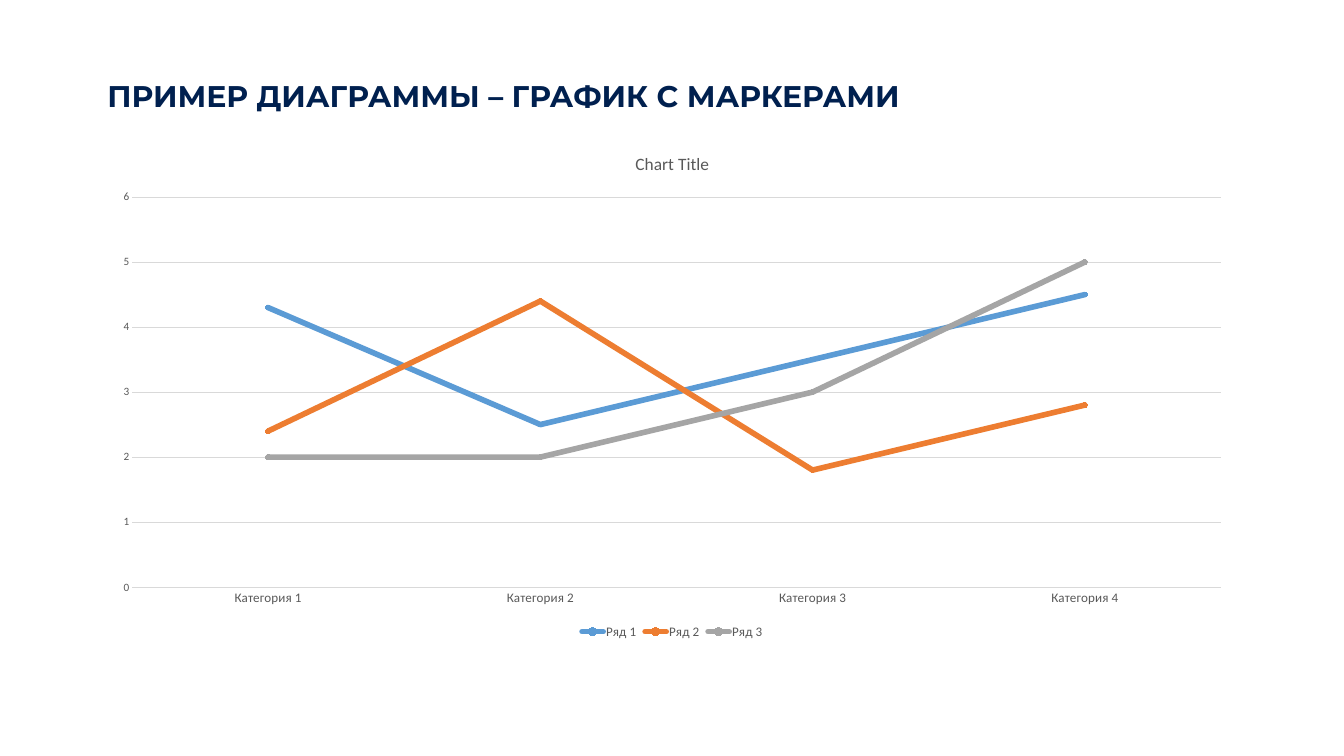
import pptx
import pptx.chart.data
import pptx.dml.color
import pptx.enum.chart
import pptx.enum.text
import pptx.util
from pptx.util import Inches

COLORS = {
    "background": "FFFFFF",
    "heading": "00204F",
    "label": "595959",
    "grid": "D9D9D9",
}
CATEGORIES = [f"Категория {number}" for number in range(1, 5)]
SERIES = [
    ("Ряд 1", "5B9BD5", (4.3, 2.5, 3.5, 4.5)),
    ("Ряд 2", "ED7D31", (2.4, 4.4, 1.8, 2.8)),
    ("Ряд 3", "A5A5A5", (2, 2, 3, 5)),
]


def rgb(value):
    """Turn a hex string into a colour."""
    return pptx.dml.color.RGBColor.from_string(value)


def style_font(font, size, color, name="Calibri", bold=False):
    """Set the face, size, weight and colour of a font."""
    font.name = name
    font.size = pptx.util.Pt(size)
    font.bold = bold
    font.color.rgb = rgb(color)


def style_line(line, color, width):
    """Set the colour and width of a line."""
    line.color.rgb = rgb(color)
    line.width = pptx.util.Pt(width)


def write_text(frame, text, spacing=None, **style):
    """Write one formatted paragraph into a text frame."""
    para = frame.paragraphs[0]
    para.line_spacing = spacing
    span = para.add_run()
    span.text = text
    style_font(span.font, **style)


def add_heading(page, left, top, width, height):
    """Place the slide heading in the given box."""
    box = page.shapes.add_textbox(left, top, width, height)
    frame = box.text_frame
    frame.word_wrap = True
    frame.vertical_anchor = pptx.enum.text.MSO_ANCHOR.MIDDLE
    write_text(frame, "ПРИМЕР ДИАГРАММЫ – ГРАФИК С МАРКЕРАМИ", spacing=0.9,
               size=32, color=COLORS["heading"], name="Montserrat", bold=True)


def style_axes(chart):
    """Format both axes and the horizontal grid."""
    for axis, size in ((chart.category_axis, 14), (chart.value_axis, 12)):
        axis.major_tick_mark = pptx.enum.chart.XL_TICK_MARK.NONE
        axis.minor_tick_mark = pptx.enum.chart.XL_TICK_MARK.NONE
        style_font(axis.tick_labels.font, size, COLORS["label"])
    style_line(chart.category_axis.format.line, COLORS["grid"], 0.75)
    chart.value_axis.format.line.fill.background()
    chart.value_axis.has_major_gridlines = True
    style_line(chart.value_axis.major_gridlines.format.line, COLORS["grid"], 0.75)


def style_series(chart):
    """Format the lines and round markers of every series."""
    for series, (_, color, _) in zip(chart.plots[0].series, SERIES):
        series.smooth = False
        style_line(series.format.line, color, 6)
        marker = series.marker
        marker.style = pptx.enum.chart.XL_MARKER_STYLE.CIRCLE
        marker.size = 5
        marker.format.fill.solid()
        marker.format.fill.fore_color.rgb = rgb(color)
        style_line(marker.format.line, color, 0.75)
    for outline in chart.element.xpath(".//c:ser/c:spPr/a:ln"):
        outline.set("cap", "rnd")


def add_line_chart(page, left, top, width, height):
    """Place the line chart with its title and legend in the given box."""
    data = pptx.chart.data.CategoryChartData()
    data.categories = CATEGORIES
    for name, _, values in SERIES:
        data.add_series(name, values)
    kind = pptx.enum.chart.XL_CHART_TYPE.LINE_MARKERS
    chart = page.shapes.add_chart(kind, left, top, width, height, data).chart
    chart.font.name = "Calibri"
    chart.font.size = pptx.util.Pt(10)
    chart.plots[0].vary_by_categories = False
    chart.has_title = True
    write_text(chart.chart_title.text_frame, "Chart Title",
               size=18.6, color=COLORS["label"])
    chart.chart_title.include_in_layout = False
    chart.has_legend = True
    chart.legend.position = pptx.enum.chart.XL_LEGEND_POSITION.BOTTOM
    chart.legend.include_in_layout = False
    style_font(chart.legend.font, 14, COLORS["label"])
    style_axes(chart)
    style_series(chart)


def main():
    """Build and save the deck."""
    deck = pptx.Presentation()
    deck.slide_width = Inches(20)
    deck.slide_height = Inches(11.25)
    page = deck.slides.add_slide(deck.slide_layouts[6])
    page.background.fill.solid()
    page.background.fill.fore_color.rgb = rgb(COLORS["background"])
    add_heading(page, Inches(1.5), Inches(0.9), Inches(17.28), Inches(1.1))
    add_line_chart(page, Inches(1.5), Inches(2), Inches(17.01), Inches(7.56))
    deck.save("out.pptx")


if __name__ == "__main__":
    main()
